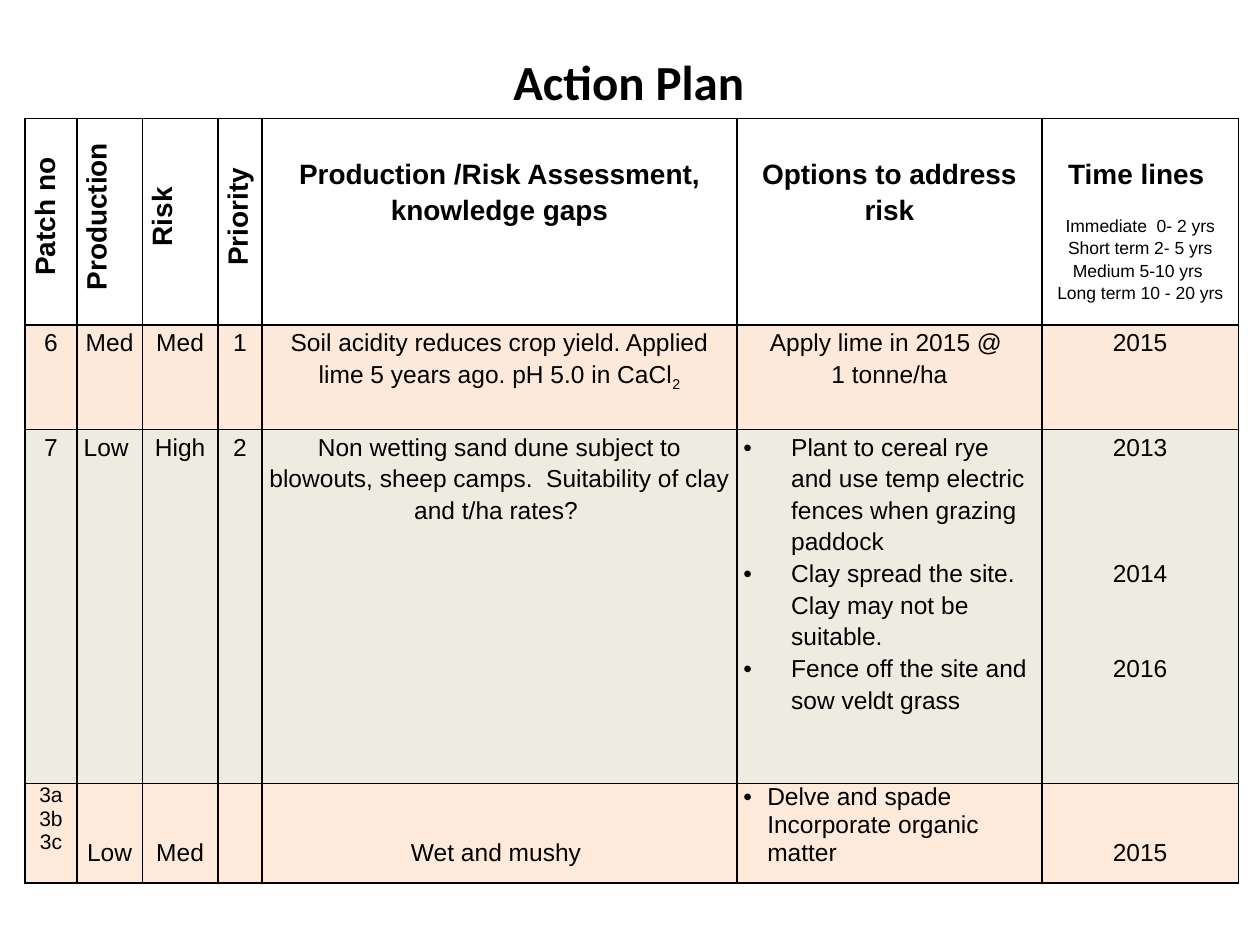
from lxml.etree import SubElement
from pptx import Presentation
from pptx.dml.color import RGBColor
from pptx.enum.text import MSO_ANCHOR, MSO_AUTO_SIZE, PP_ALIGN
from pptx.oxml.ns import qn
from pptx.util import Inches, Pt

COLOURS = {"ink": "000000", "peach": "FDE9D9", "stone": "EEECE1", "apricot": "FDEADA"}
GRID_COLUMNS = 100
LINE_PITCH = 18.1


def write(frame, text, size=14, font="Arial", bold=False, align=PP_ALIGN.CENTER,
          spacing=1.15, before=0, indent=0, bullet=None, subscript=None):
    paragraph = frame.paragraphs[0] if not frame.text else frame.add_paragraph()
    paragraph.alignment = PP_ALIGN.LEFT if bullet else align
    paragraph.line_spacing = spacing
    paragraph.space_before = Pt(before)
    properties = paragraph._p.get_or_add_pPr()
    properties.set("marL", str(Inches(indent)))
    properties.set("indent", str(Inches(-indent if bullet else 0)))
    if bullet:
        SubElement(properties, qn("a:buFont"), typeface="Arial")
        SubElement(properties, qn("a:buChar"), char=bullet)
    for part, baseline in ((text, None), (subscript, "-25000")):
        if part:
            run = paragraph.add_run()
            run.text = part
            run.font.size, run.font.name, run.font.bold = Pt(size), font, bold
            run.font.color.rgb = RGBColor.from_string(COLOURS["ink"])
            if baseline:
                run._r.get_or_add_rPr().set("baseline", baseline)


class PlanSlide:
    def __init__(self, deck):
        self.slide = deck.slides.add_slide(deck.slide_layouts[5])
        self.unit = deck.slide_width / GRID_COLUMNS

    def span(self, units):
        return round(units * self.unit)

    def title(self, text, left, top, width, height):
        heading = self.slide.shapes.title
        heading.left, heading.top = self.span(left), self.span(top)
        heading.width, heading.height = self.span(width), self.span(height)
        frame = heading.text_frame
        frame.vertical_anchor = MSO_ANCHOR.MIDDLE
        frame.auto_size = MSO_AUTO_SIZE.SHAPE_TO_FIT_TEXT
        write(frame, text, size=28, font="Calibri", bold=True, spacing=1.0)

    def table(self, left, top, widths, heights):
        table = self.slide.shapes.add_table(
            len(heights), len(widths), self.span(left), self.span(top),
            self.span(sum(widths)), self.span(sum(heights))).table
        table.first_row = table.horz_banding = False
        for column, width in zip(table.columns, widths):
            column.width = self.span(width)
        for row, height in zip(table.rows, heights):
            row.height = self.span(height)
        return table

    def cell(self, cell, paragraphs, fill=None, top=0, vertical=False):
        cell.margin_left = cell.margin_right = Inches(0.05)
        cell.margin_top, cell.margin_bottom = Inches(top), 0
        properties = cell._tc.get_or_add_tcPr()
        if vertical:
            properties.set("vert", "vert270")
        for edge in ("lnL", "lnR", "lnT", "lnB"):
            border = SubElement(properties, qn(f"a:{edge}"), w=str(Pt(1)))
            solid = SubElement(border, qn("a:solidFill"))
            SubElement(solid, qn("a:srgbClr"), val=COLOURS["ink"])
        if fill:
            cell.fill.solid()
            cell.fill.fore_color.rgb = RGBColor.from_string(COLOURS[fill])
        else:
            cell.fill.background()
        for text, style in paragraphs:
            write(cell.text_frame, text, **style)

    def row(self, cells, contents, fill, **style):
        for cell, content in zip(cells, contents):
            entries = content if isinstance(content, list) else [content]
            pairs = [e if isinstance(e, tuple) else (e, {}) for e in entries if e]
            self.cell(cell, [(text, {**style, **own}) for text, own in pairs], fill)


def main():
    deck = Presentation()
    deck.slide_width, deck.slide_height = Inches(10), Inches(7.5)
    plan = PlanSlide(deck)
    plan.title("Action Plan", -0.1, 3.6, 100, 5.7)
    table = plan.table(2, 9.4, [4.1, 5.2, 6, 3.5, 37.7, 24.2, 15.6], [16.4, 8.3, 28.1, 7.9])
    header, acidity, dune, wet = (list(row.cells) for row in table.rows)

    heading = {"size": 16, "bold": True}
    for cell, label in zip(header, ("Patch no", "Production", "Risk", "Priority")):
        plan.cell(cell, [(label, {**heading, "indent": 0.08})], vertical=True)
    periods = ["Immediate  0- 2 yrs", "Short term 2- 5 yrs",
               "Medium 5-10 yrs ", "Long term 10 - 20 yrs"]
    legend = [(period, {"size": 10, "before": 0 if i else 13})
              for i, period in enumerate(periods)]
    for cell, label, details in zip(
            header[4:],
            ("Production /Risk Assessment, knowledge gaps", "Options to address risk", "Time lines "),
            ([], [], legend)):
        plan.cell(cell, [(label, heading)] + details, top=0.29)

    plan.row(acidity, [
        "6", "Med ", "Med", "1",
        ("Soil acidity reduces crop yield. Applied lime 5 years ago. pH 5.0 in CaCl",
         {"subscript": "2"}),
        ["Apply lime in 2015 @ ", "1 tonne/ha"], "2015"], "peach")

    point = {"bullet": "•", "indent": 0.38}
    plan.row(dune, [
        "7", "Low ", "High", "2",
        "Non wetting sand dune subject to blowouts, sheep camps.  "
        "Suitability of clay and t/ha rates? ",
        [("Plant to cereal rye and use temp electric fences when grazing paddock", point),
         ("Clay spread the site. Clay may not be suitable.", point),
         ("Fence off the site and sow veldt grass", point)],
        ["2013", ("2014", {"before": 3 * LINE_PITCH}),
         ("2016", {"before": 2 * LINE_PITCH})]], "stone")

    patch = {"size": 12, "spacing": 1.0}
    plan.row(wet, [
        [(name, patch) for name in ("3a", "3b", "3c")], "Low", "Med", [], "Wet and mushy ",
        ("Delve and spade Incorporate organic matter",
         {"bullet": "•", "indent": 0.19, "spacing": 1.0}),
        "2015"], "apricot", spacing=3.0)
    deck.save("out.pptx")


if __name__ == "__main__":
    main()
